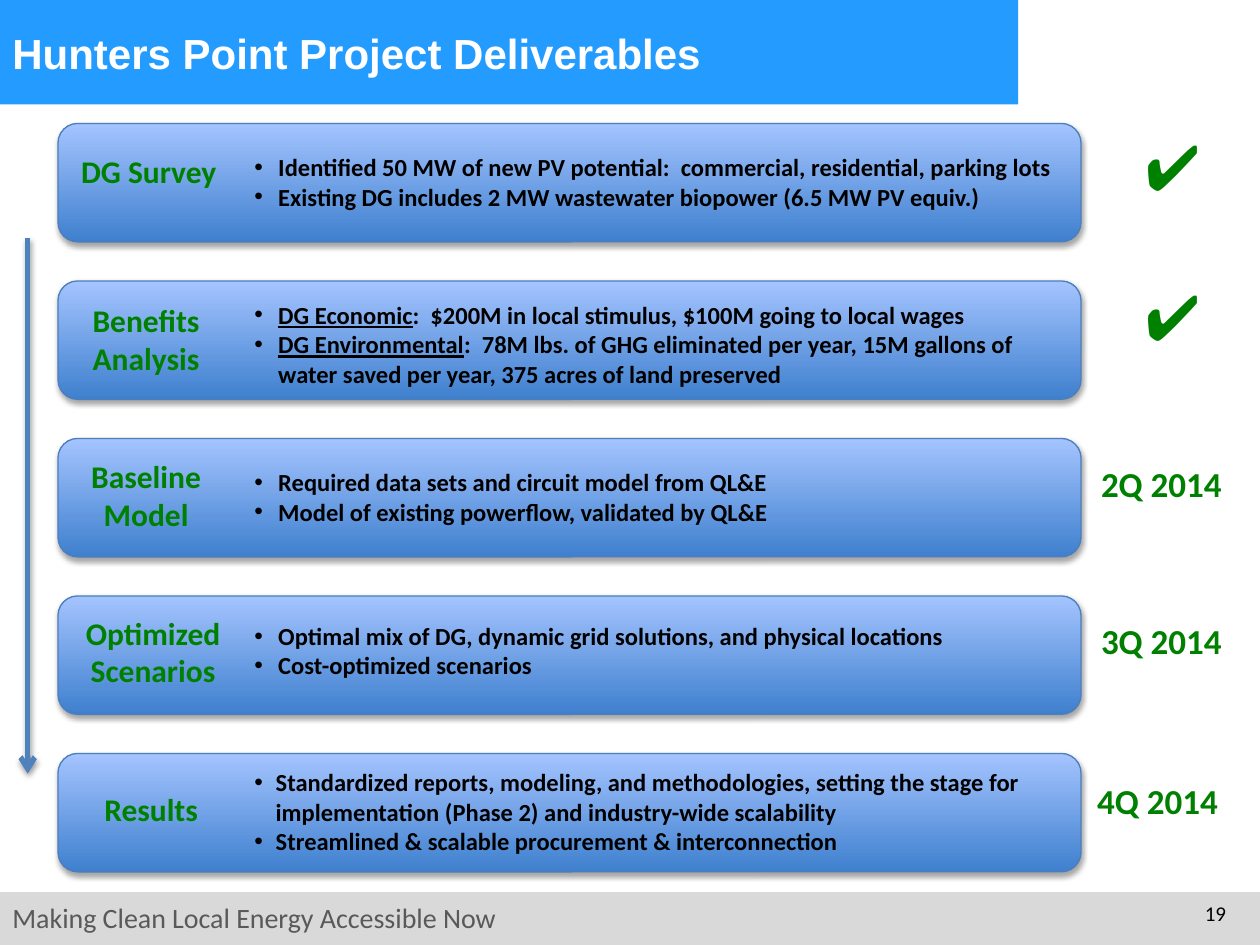
import pptx
import pptx.util
import pptx.dml.color
import pptx.enum.shapes
import pptx.enum.text
import pptx.oxml.ns
import lxml.etree

Inches, Pt = pptx.util.Inches, pptx.util.Pt
qn = pptx.oxml.ns.qn
SHAPE = pptx.enum.shapes.MSO_SHAPE
ALIGN = pptx.enum.text.PP_ALIGN
ANCHOR = pptx.enum.text.MSO_ANCHOR
FIT = pptx.enum.text.MSO_AUTO_SIZE

COLORS = {
    "header": "249CFF", "footer": "D9D9D9", "motto": "595959",
    "low": "3F80CE", "high": "A4C4FF", "edge": "4B7EBC", "rail": "4F81BD",
    "green": "008000", "black": "000000", "white": "FFFFFF",
}
CARD_TOP, CARD_STEP = 0.98, 1.25

# label, label place, bullets top, bullet indent, bullets (underlined head, rest)
ROWS = [
    ("DG Survey", (0.49, 1.16, 1.38, 0.4), 1.16, 0.19, [
        ("", "Identified 50 MW of new PV potential:  commercial, residential, parking lots"),
        ("", "Existing DG includes 2 MW wastewater biopower (6.5 MW PV equiv.)")]),
    ("Benefits Analysis", (0.51, 2.34, 1.3, 0.71), 2.33, 0.19, [
        ("DG Economic", ":  $200M in local stimulus, $100M going to local wages"),
        ("DG Environmental", ":  78M lbs. of GHG eliminated per year, 15M gallons of "
         "water saved per year, 375 acres of land preserved")]),
    ("Baseline Model", (0.51, 3.58, 1.3, 0.71), 3.66, 0.19, [
        ("", "Required data sets and circuit model from QL&E"),
        ("", "Model of existing powerflow, validated by QL&E")]),
    ("Optimized\nScenarios", (0.57, 4.82, 1.29, 0.71), 4.88, 0.19, [
        ("", "Optimal mix of DG, dynamic grid solutions, and physical locations"),
        ("", "Cost-optimized scenarios")]),
    ("Results", (0.56, 6.22, 1.28, 0.4), 6.04, 0.17, [
        ("", "Standardized reports, modeling, and methodologies, setting the stage for "
         "implementation (Phase 2) and industry-wide scalability"),
        ("", "Streamlined & scalable procurement & interconnection")]),
]
CHECKS = [0.96, 2.15]
DATES = [("2Q 2014", 8.64, 3.62), ("3Q 2014", 8.64, 4.87), ("4Q 2014", 8.61, 6.14)]


def tint(name):
    return pptx.dml.color.RGBColor.from_string(COLORS[name])


class Deck:
    """Holds the style and the current slide."""

    def __init__(self, face="Calibri"):
        self.face = face
        self.show = pptx.Presentation()
        self.show.slide_width, self.show.slide_height = Inches(10), Inches(7.5)
        self.slide = self.show.slides.add_slide(self.show.slide_layouts[6])

    def style(self, run, size, color, bold, face=None):
        font = run.font
        font.name, font.size, font.bold = face or self.face, Pt(size), bold
        font.color.rgb = tint(color)

    def frame(self, place, wrap=True, grow=True):
        box = self.slide.shapes.add_textbox(*map(Inches, place))
        frame = box.text_frame
        frame.auto_size = FIT.SHAPE_TO_FIT_TEXT if grow else FIT.NONE
        frame.word_wrap = wrap
        return frame

    def text(self, words, place, size, color, bold=False, face=None,
             align=ALIGN.LEFT, wrap=True, grow=True):
        frame = self.frame(place, wrap, grow)
        frame.text = words
        for para in frame.paragraphs:
            para.alignment = align
            for run in para.runs:
                self.style(run, size, color, bold, face)
        return frame

    def bullets(self, items, place, indent):
        frame = self.frame(place)
        for i, (head, rest) in enumerate(items):
            para = frame.add_paragraph() if i else frame.paragraphs[0]
            props = para._p.get_or_add_pPr()
            props.set("marL", str(Inches(indent)))
            props.set("indent", str(-Inches(indent)))
            lxml.etree.SubElement(props, qn("a:buFont"), typeface="Arial")
            lxml.etree.SubElement(props, qn("a:buChar"), char="•")
            for words in filter(None, (head, rest)):
                run = para.add_run()
                run.text = words
                self.style(run, 14, "black", True)
                run.font.underline = words == head

    def bar(self, place, color):
        bar = self.slide.shapes.add_shape(SHAPE.RECTANGLE, *map(Inches, place))
        bar.shadow.inherit = False
        bar.fill.solid()
        bar.fill.fore_color.rgb = tint(color)
        bar.line.fill.background()

    def shade(self, shape, alpha, dist):
        """Add a soft shadow below; call it once fill and line are set."""
        sub = lxml.etree.SubElement
        effect = sub(shape._element.spPr, qn("a:effectLst"))
        outer = sub(effect, qn("a:outerShdw"), blurRad=str(Pt(3.1)), dist=str(Pt(dist)),
                    dir="5400000", rotWithShape="0")
        color = sub(outer, qn("a:srgbClr"), val=COLORS["black"])
        sub(color, qn("a:alpha"), val=str(alpha * 1000))

    def card(self, place):
        card = self.slide.shapes.add_shape(SHAPE.ROUNDED_RECTANGLE, *map(Inches, place))
        card.fill.gradient()
        card.fill.gradient_angle = 90
        for stop, spot, name in zip(card.fill.gradient_stops, (0, 1), ("low", "high")):
            stop.position = spot
            stop.color.rgb = tint(name)
        card.line.color.rgb = tint("edge")
        card.line.width = Pt(0.75)
        self.shade(card, 35, 1.8)

    def arrow(self, ends):
        kind = pptx.enum.shapes.MSO_CONNECTOR.STRAIGHT
        arrow = self.slide.shapes.add_connector(kind, *map(Inches, ends))
        arrow.line.color.rgb = tint("rail")
        arrow.line.width = Pt(3)
        lxml.etree.SubElement(arrow.line._get_or_add_ln(), qn("a:tailEnd"), type="arrow")
        self.shade(arrow, 38, 1.6)


def main():
    deck = Deck()
    deck.bar((0, 7.08, 10, 0.42), "footer")
    deck.text("Making Clean Local Energy Accessible Now", (0, 7.1, 5.17, 0.37), 16, "motto")
    deck.bar((0, 0, 8.08, 0.83), "header")
    deck.text("19", (9.33, 7.1, 0.5, 0.4), 12, "black", align=ALIGN.RIGHT, grow=False)
    title = deck.text("Hunters Point Project Deliverables", (0, 0, 8, 0.83), 24, "white",
                      bold=True, face="Arial", grow=False)
    title.vertical_anchor = ANCHOR.MIDDLE

    for i, (label, place, top, indent, items) in enumerate(ROWS):
        deck.card((0.46, CARD_TOP + i * CARD_STEP, 8.12, 0.94))
        deck.text(label, place, 18, "green", bold=True, align=ALIGN.CENTER,
                  wrap="\n" not in label)
        height = 0.81 if any(len(head + rest) > 80 for head, rest in items) else 0.57
        deck.bullets(items, (1.92, top, 6.66, height), indent)

    for top in CHECKS:
        deck.text("✔", (8.99, top, 0.63, 0.71), 36, "green", face="Arial", wrap=False)
    for date, left, top in DATES:
        deck.text(date, (left, top, 1.17, 0.44), 20, "green", bold=True, wrap=False)
    deck.arrow((0.22, 1.89, 0.22, 6.14))
    deck.show.save("out.pptx")


if __name__ == "__main__":
    main()
